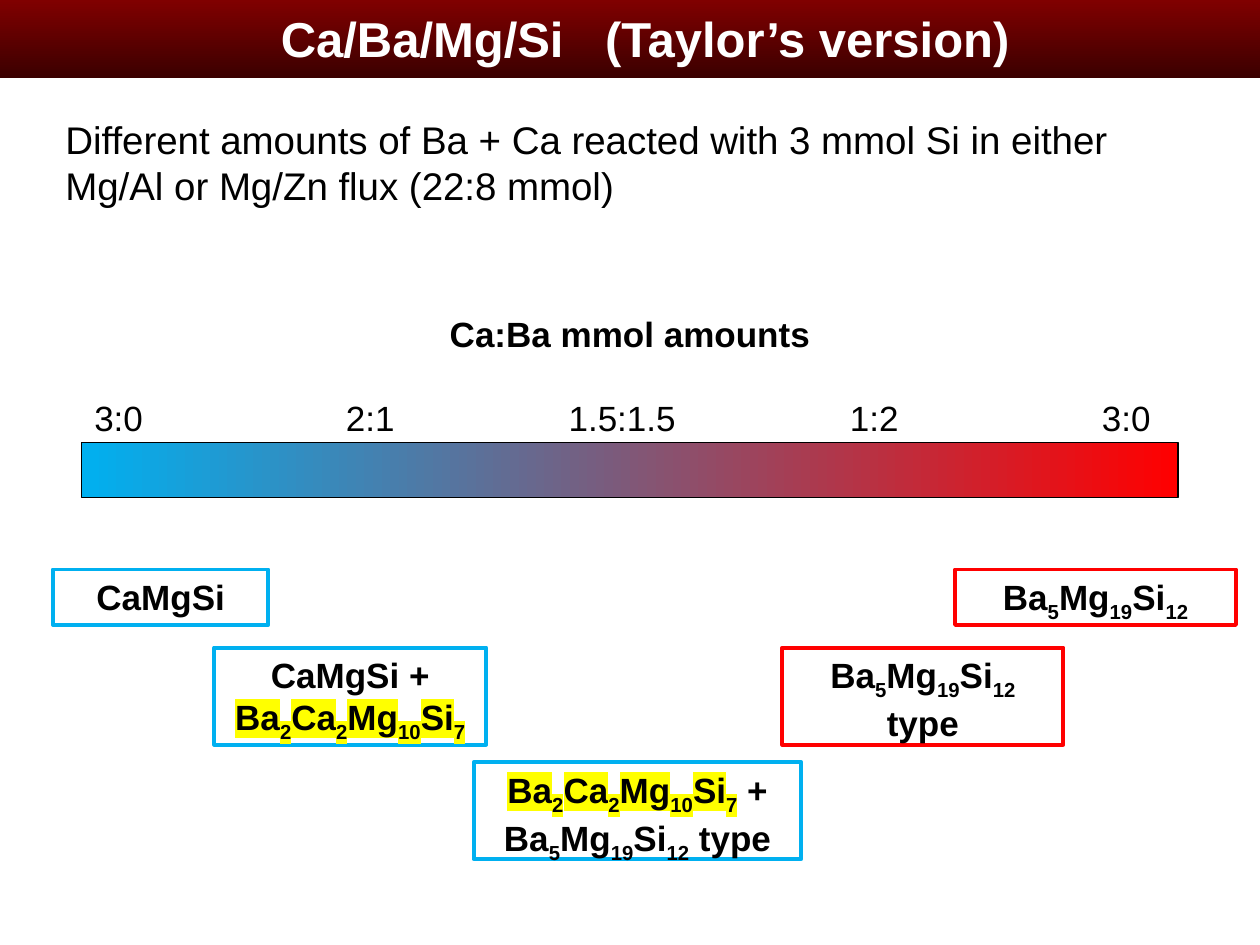
from itertools import groupby

from lxml.etree import SubElement
from pptx import Presentation
from pptx.dml.color import RGBColor
from pptx.enum.shapes import MSO_SHAPE as Preset
from pptx.enum.text import MSO_ANCHOR as Anchor, PP_ALIGN as Align
from pptx.oxml.ns import qn
from pptx.util import Inches, Pt

COLUMNS, ROWS = 100, 75
BLACK, WHITE, YELLOW = "000000", "FFFFFF", "FFFF00"
CALCIUM, BARIUM = "00B0F0", "FF0000"
TERNARY, QUATERNARY = "Ba5Mg19Si12", "Ba2Ca2Mg10Si7"


def rgb(hex_code):
    return RGBColor.from_string(hex_code)


class SlideBuilder:
    font = "Arial"
    size = 20

    def __init__(self, deck):
        self.column = deck.slide_width / COLUMNS
        self.row = deck.slide_height / ROWS
        self.slide = deck.slides.add_slide(deck.slide_layouts[5])

    def cells(self, left, top, width, height):
        """Turn grid columns and rows into slide lengths."""
        return (round(left * self.column), round(top * self.row),
                round(width * self.column), round(height * self.row))

    def run(self, paragraph, text, size=None, color=BLACK, bold=False):
        run = paragraph.add_run()
        run.text = text
        run.font.name = self.font
        run.font.size = Pt(size or self.size)
        run.font.bold = bold
        run.font.color.rgb = rgb(color)
        return run

    def formula(self, paragraph, text, highlight=None):
        """Write bold text with every number lowered as a subscript."""
        for is_number, letters in groupby(text, str.isdigit):
            properties = self.run(paragraph, "".join(letters), bold=True).font._element
            if is_number:
                properties.set("baseline", "-25000")
            if highlight:
                mark = SubElement(properties, qn("a:highlight"))
                SubElement(mark, qn("a:srgbClr")).set("val", highlight)
                properties.find(qn("a:solidFill")).addnext(mark)

    def title(self, grid, parts, gap):
        """Write the title parts, parted by a space widened by gap points."""
        title = self.slide.shapes.title
        title.left, title.top, title.width, title.height = self.cells(*grid)
        title.text_frame.vertical_anchor = Anchor.TOP
        paragraph = title.text_frame.paragraphs[0]
        paragraph.alignment = Align.CENTER
        for text in (parts[0], " ", parts[1]):
            run = self.run(paragraph, text, 28, WHITE, True)
            if text == " ":
                run.font._element.set("spc", str(gap * 100))
        self.slide.shapes._spTree.append(title._element)

    def rectangle(self, grid, line=None, weight=0.75):
        shape = self.slide.shapes.add_shape(Preset.RECTANGLE, *self.cells(*grid))
        shape.shadow.inherit = False
        shape.fill.background()
        if line:
            shape.line.color.rgb = rgb(line)
            shape.line.width = Pt(weight)
        else:
            shape.line.fill.background()
        return shape

    def gradient(self, grid, colors, angle, line=None):
        fill = self.rectangle(grid, line).fill
        fill.gradient()
        fill.gradient_angle = angle
        for stop, color in zip(fill.gradient_stops, colors):
            stop.color.rgb = rgb(color)

    def text_box(self, grid):
        frame = self.slide.shapes.add_textbox(*self.cells(*grid)).text_frame
        frame.word_wrap = True
        return frame

    def statement(self, grid, text):
        self.run(self.text_box(grid).paragraphs[0], text, 22)

    def scale(self, grid, heading, ratios, first_stop, step):
        """Write a heading over ratios that are centred on equal tab stops."""
        frame = self.text_box(grid)
        top = frame.paragraphs[0]
        top.alignment = Align.CENTER
        self.run(top, heading, bold=True)
        labels = frame.add_paragraph()
        labels.space_before = Pt(24)
        self.run(labels, "\t".join(ratios))
        stops = SubElement(labels._p.get_or_add_pPr(), qn("a:tabLst"))
        for index in range(len(ratios) - 1):
            stop = SubElement(stops, qn("a:tab"))
            stop.set("pos", str(Inches(first_stop + index * step)))
            stop.set("algn", "ctr")

    def product(self, grid, color, *parts):
        """Frame a reaction product; each part is a text and its highlight."""
        frame = self.rectangle(grid, color, 2.25).text_frame
        frame.word_wrap = True
        frame.vertical_anchor = Anchor.TOP
        paragraph = frame.paragraphs[0]
        paragraph.alignment = Align.CENTER
        for text, highlight in parts:
            self.formula(paragraph, text, highlight)


def main():
    deck = Presentation()
    deck.slide_width, deck.slide_height = Inches(10), Inches(7.5)
    slide = SlideBuilder(deck)

    slide.gradient((0, 0, COLUMNS, 6.2), ("800000", "3B0000"), 270)
    slide.title((2.4, 0.2, 97.6, 5.7), ("Ca/Ba/Mg/Si", "(Taylor’s version)"), 16)
    slide.statement((4.2, 8.7, 85.1, 11.8),
                    "Different amounts of Ba + Ca reacted with 3 mmol Si "
                    "in either Mg/Al or Mg/Zn flux (22:8 mmol)")

    slide.gradient((6.5, 35.1, 87, 4.4), (CALCIUM, BARIUM), 0, BLACK)
    slide.scale((6.5, 24.3, 87, 14.5), "Ca:Ba mmol amounts",
                ("3:0", "2:1", "1.5:1.5", "1:2", "3:0"), 2.19, 2)

    single, double = 4.4, 7.7
    first, second, third = 45.2, 51.4, 60.5
    slide.product((4.2, first, 17.1, single), CALCIUM, ("CaMgSi", None))
    slide.product((75.8, first, 22.3, single), BARIUM, (TERNARY, None))
    slide.product((17, second, 21.6, double), CALCIUM,
                  ("CaMgSi + ", None), (QUATERNARY, YELLOW))
    slide.product((62.1, second, 22.3, double), BARIUM, (TERNARY + " type", None))
    slide.product((37.6, third, 26, double), CALCIUM,
                  (QUATERNARY, YELLOW), (f" + {TERNARY} type", None))

    deck.save("out.pptx")


if __name__ == "__main__":
    main()
